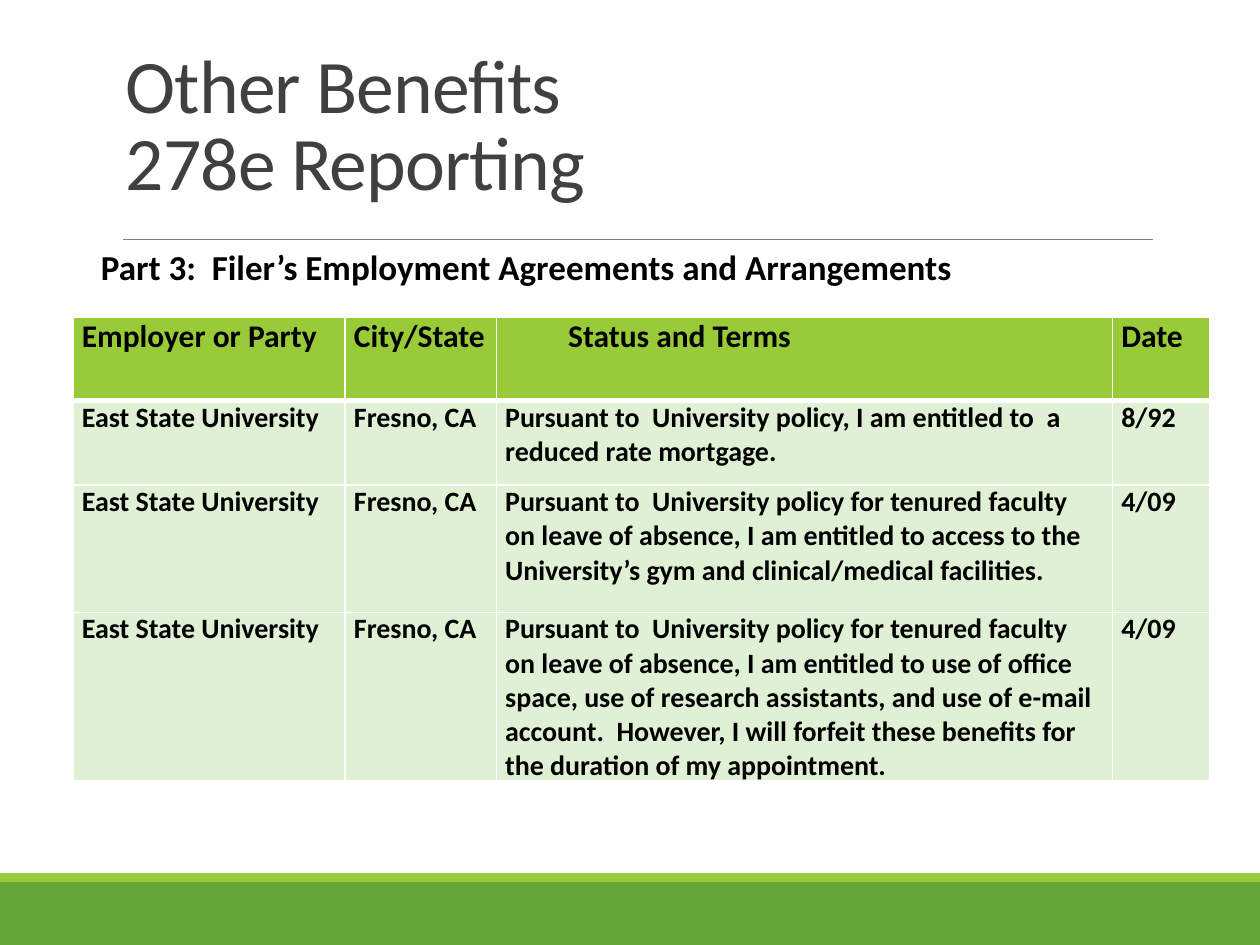
from lxml import etree
from pptx import Presentation
from pptx import util as u
from pptx.dml.color import RGBColor
from pptx.enum import shapes, text
from pptx.oxml.ns import qn

COLORS = {"band": "63A537", "accent": "99CB38", "row": "DFF0D4", "rule": "808080",
          "title": "404040", "body": "000000", "border": "FFFFFF"}
FONT = "Calibri"
WIDTH, HEIGHT = 10, 7.5

TITLE = "Other Benefits\n278e Reporting"
SUBTITLE = "Part 3:  Filer’s Employment Agreements and Arrangements"
HEADER = ("Employer or Party", "City/State", "Status and Terms", "Date")
EMPLOYER = ("East State University", "Fresno, CA")
TENURED = "Pursuant to  University policy for tenured faculty on leave of absence, I am entitled to "
BENEFITS = [
    ("Pursuant to  University policy, I am entitled to  a reduced rate mortgage.", "8/92"),
    (TENURED + "access to the University’s gym and clinical/medical facilities.", "4/09"),
    (TENURED + "use of office space, use of research assistants, and use of e-mail account.  "
     "However, I will forfeit these benefits for the duration of my appointment.", "4/09"),
]
ROWS = [HEADER] + [EMPLOYER + benefit for benefit in BENEFITS]
COLUMN_WIDTHS = (2.16, 1.2, 4.89, 0.77)
ROW_HEIGHTS = (0.66, 0.67, 1.01, 1.33)
LEFT, TABLE_TOP = 0.58, 2.52
RULE_Y = 1.9
BAND_HEIGHT, STRIPE_HEIGHT = 0.5, 0.07


def color(name):
    return RGBColor.from_string(COLORS[name])


def write(frame, words, size, fill="body", bold=False, line_spacing=None, tracking=None, indent=0):
    frame.word_wrap = True
    paragraph = frame.paragraphs[0]
    paragraph.text = words
    if line_spacing:
        paragraph.line_spacing = line_spacing
    if indent:
        paragraph._p.get_or_add_pPr().set("marL", str(u.Inches(indent)))
    for run in paragraph.runs:
        run.font.name, run.font.size, run.font.bold = FONT, u.Pt(size), bold
        run.font.color.rgb = color(fill)
        if tracking:
            run.font._element.set("spc", str(int(tracking * 100)))


def add_bar(slide, top, height, fill):
    bar = slide.shapes.add_shape(shapes.MSO_SHAPE.RECTANGLE, 0, u.Inches(top),
                                 u.Inches(WIDTH), u.Inches(height))
    bar.shadow.inherit = False
    bar.fill.solid()
    bar.fill.fore_color.rgb = color(fill)
    bar.line.fill.background()


def add_rule(slide, left, right, y):
    rule = slide.shapes.add_connector(shapes.MSO_CONNECTOR.STRAIGHT, u.Inches(left), u.Inches(y),
                                      u.Inches(right), u.Inches(y))
    rule.line.color.rgb = color("rule")
    rule.line.width = u.Pt(0.5)
    etree.SubElement(rule._element.spPr, qn("a:effectLst"))


def add_text(slide, box, words, **style):
    frame = slide.shapes.add_textbox(*map(u.Inches, box)).text_frame
    write(frame, words, **style)
    return frame


def set_borders(cell, **widths):
    """Draw cell borders, in points, ahead of the fill as the schema requires."""
    properties = cell._tc.get_or_add_tcPr()
    for place, side in enumerate("LRTB"):
        line = etree.Element(qn(f"a:ln{side}"), w=str(u.Pt(widths.get(side, 1))))
        fill = etree.SubElement(line, qn("a:solidFill"))
        etree.SubElement(fill, qn("a:srgbClr"), val=COLORS["border"])
        properties.insert(place, line)


def add_benefits_table(slide):
    table = slide.shapes.add_table(len(ROWS), len(HEADER), u.Inches(LEFT), u.Inches(TABLE_TOP),
                                   u.Inches(sum(COLUMN_WIDTHS)), u.Inches(sum(ROW_HEIGHTS))).table
    for column, width in zip(table.columns, COLUMN_WIDTHS):
        column.width = u.Inches(width)
    for r, (values, height) in enumerate(zip(ROWS, ROW_HEIGHTS)):
        table.rows[r].height = u.Inches(height)
        is_header = r == 0
        for c, value in enumerate(values):
            cell = table.cell(r, c)
            cell.margin_left = cell.margin_right = u.Inches(0.07)
            cell.margin_top = cell.margin_bottom = 0
            cell.fill.solid()
            cell.fill.fore_color.rgb = color("accent" if is_header else "row")
            set_borders(cell, T=3 if r == 1 else 1, B=3 if is_header else 1)
            write(cell.text_frame, value, size=18 if is_header else 16, bold=True,
                  indent=0.5 if value == "Status and Terms" else 0)


def main():
    deck = Presentation()
    deck.slide_width, deck.slide_height = u.Inches(WIDTH), u.Inches(HEIGHT)
    slide = deck.slides.add_slide(deck.slide_layouts[6])

    band_top = HEIGHT - BAND_HEIGHT
    add_bar(slide, band_top, BAND_HEIGHT, "band")
    add_bar(slide, band_top - STRIPE_HEIGHT, STRIPE_HEIGHT, "accent")
    add_rule(slide, 0.98, 9.15, RULE_Y)

    title = add_text(slide, (0.9, 0.31, 8.25, 1.42), TITLE, size=43.2, fill="title",
                     line_spacing=0.85, tracking=-0.5)
    title.vertical_anchor = text.MSO_ANCHOR.MIDDLE
    subtitle = add_text(slide, (LEFT, RULE_Y, 8.72, 0.44), SUBTITLE, size=20, bold=True)
    subtitle.margin_left = u.Inches(0.22)
    add_benefits_table(slide)
    deck.save("out.pptx")


if __name__ == "__main__":
    main()
